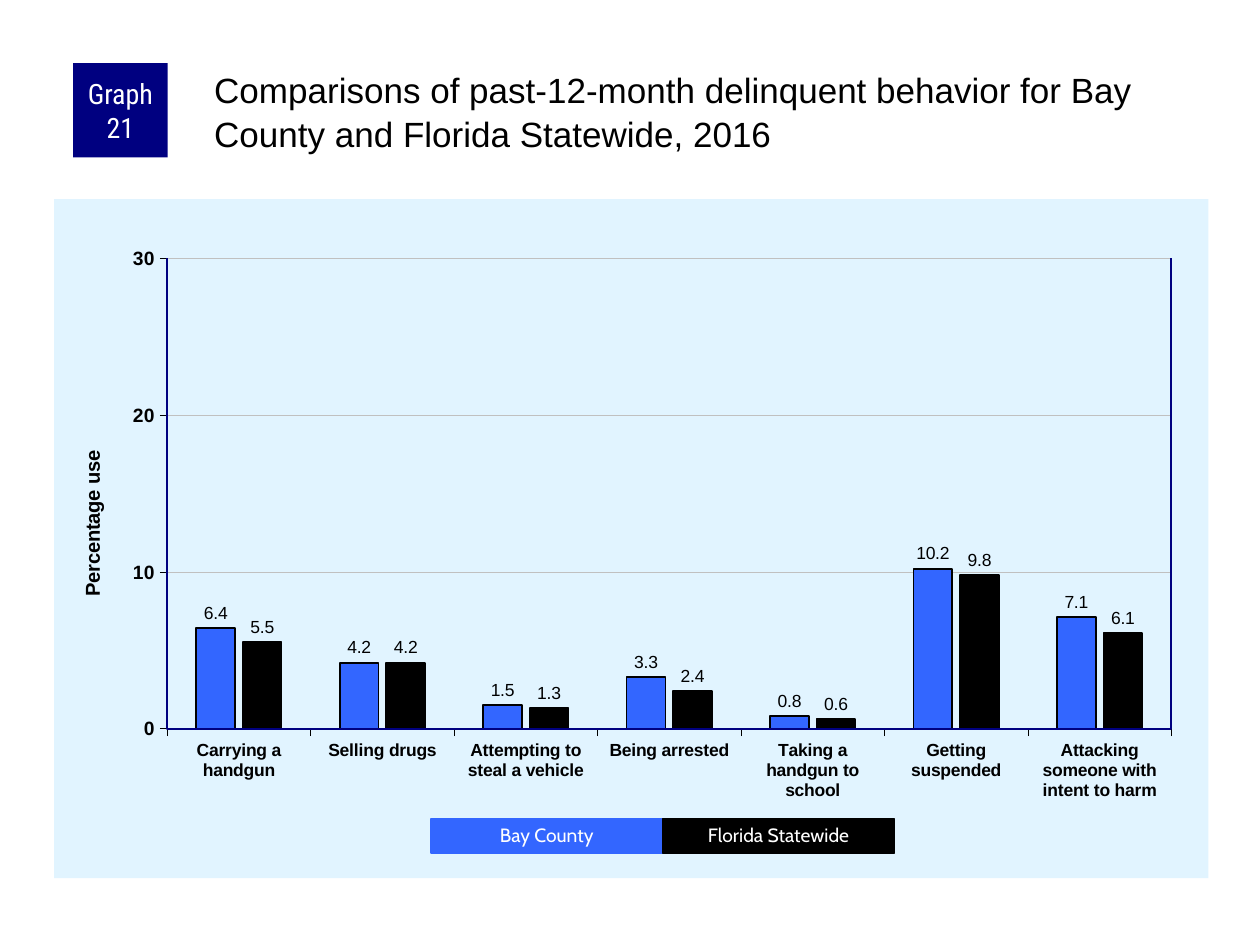
import pptx
import pptx.util
import pptx.chart.data
import pptx.dml.color
import pptx.enum.chart
import pptx.enum.shapes
import pptx.enum.text
import pptx.oxml

Inches, Pt = pptx.util.Inches, pptx.util.Pt
ANCHOR = pptx.enum.text.MSO_ANCHOR
ALIGN = pptx.enum.text.PP_ALIGN

TITLE = ("Comparisons of past-12-month delinquent behavior for Bay County "
         "and Florida Statewide, 2016")
BADGE = "Graph 21"
AXIS_TITLE = "Percentage use"
BLACK, WHITE, NAVY, BLUE = "000000", "FFFFFF", "000080", "3366FF"
PANEL, GRID = "E1F4FF", "C0C0C0"
REGIONS = [("Bay County", BLUE), ("Florida Statewide", BLACK)]
BEHAVIORS = [
    ("Carrying a handgun", 6.4, 5.5),
    ("Selling drugs", 4.2, 4.2),
    ("Attempting to steal a vehicle", 1.5, 1.3),
    ("Being arrested", 3.3, 2.4),
    ("Taking a handgun to school", 0.8, 0.6),
    ("Getting suspended", 10.2, 9.8),
    ("Attacking someone with intent to harm", 7.1, 6.1),
]
CHART = (0.43, 1.58, 9.16, 5.39)
PLOT = {"x": 0.098, "y": 0.087, "w": 0.87, "h": 0.693}
KEY_LEFT, KEY_TOP, KEY_WIDTH, KEY_HEIGHT = 3.42, 6.5, 1.84, 0.27


def color(value):
    return pptx.dml.color.RGBColor.from_string(value)


def fill(target, value):
    target.fill.solid()
    target.fill.fore_color.rgb = color(value)


def outline(line, value, width):
    line.color.rgb = color(value)
    line.width = Pt(width)


def style(font, size, value=BLACK, name="Arial", bold=False):
    font.size, font.name, font.bold = Pt(size), name, bold
    font.color.rgb = color(value)


def write(frame, text, size, value, name, align, spacing=1.0):
    para = frame.paragraphs[0]
    para.alignment, para.line_spacing = align, spacing
    span = para.add_run()
    span.text = text
    style(span.font, size, value, name)


def add_block(page, bounds, value, text, size, name, insets, spacing=1.0):
    box = page.shapes.add_shape(pptx.enum.shapes.MSO_SHAPE.RECTANGLE,
                                *map(Inches, bounds))
    box.shadow.inherit = False
    fill(box, value)
    outline(box.line, value, 0.75)
    frame = box.text_frame
    frame.word_wrap, frame.vertical_anchor = True, ANCHOR.MIDDLE
    frame.margin_left = frame.margin_right = Inches(insets[0])
    frame.margin_top = frame.margin_bottom = Inches(insets[1])
    write(frame, text, size, WHITE, name, ALIGN.CENTER, spacing)
    return box


def fix_plot_area(chart):
    items = "".join(f'<c:{key} val="{value}"/>' for key, value in PLOT.items())
    layout = pptx.oxml.parse_xml(
        '<c:layout xmlns:c="http://schemas.openxmlformats.org/drawingml/2006/chart">'
        '<c:manualLayout><c:layoutTarget val="inner"/>'
        f'<c:xMode val="edge"/><c:yMode val="edge"/>{items}'
        '</c:manualLayout></c:layout>')
    area = chart._chartSpace.chart.plotArea
    for old in area.xpath("c:layout"):
        area.remove(old)
    area.insert(0, layout)


def fill_chart_area(chart):
    space = chart._chartSpace
    properties = pptx.oxml.parse_xml(
        '<c:spPr xmlns:c="http://schemas.openxmlformats.org/drawingml/2006/chart" '
        'xmlns:a="http://schemas.openxmlformats.org/drawingml/2006/main">'
        f'<a:solidFill><a:srgbClr val="{PANEL}"/></a:solidFill>'
        '<a:ln><a:noFill/></a:ln></c:spPr>')
    space.chart.addnext(properties)


def add_behavior_chart(page):
    data = pptx.chart.data.CategoryChartData(number_format="0.0")
    data.categories = [row[0] for row in BEHAVIORS]
    for index, (region, _) in enumerate(REGIONS, 1):
        data.add_series(region, [row[index] for row in BEHAVIORS])
    chart = page.shapes.add_chart(
        pptx.enum.chart.XL_CHART_TYPE.COLUMN_CLUSTERED,
        *map(Inches, CHART), data).chart
    style(chart.font, 11.5)
    chart.has_legend = chart.has_title = False
    fill_chart_area(chart)
    fix_plot_area(chart)

    plot = chart.plots[0]
    plot.gap_width, plot.overlap, plot.vary_by_categories = 150, -20, False
    for series, (_, value) in zip(plot.series, REGIONS):
        fill(series.format, value)
        outline(series.format.line, BLACK, 1)
        series.invert_if_negative = False
        labels = series.data_labels
        labels.show_value = True
        labels.number_format, labels.number_format_is_linked = "0.0", False
        labels.position = pptx.enum.chart.XL_LABEL_POSITION.OUTSIDE_END
        style(labels.font, 10)

    for axis, size in ((chart.category_axis, 10), (chart.value_axis, 11)):
        axis.major_tick_mark = pptx.enum.chart.XL_TICK_MARK.OUTSIDE
        outline(axis.format.line, BLACK, 0.25)
        style(axis.tick_labels.font, size, bold=True)
    axis = chart.value_axis
    axis.minimum_scale, axis.maximum_scale, axis.major_unit = 0, 30, 10
    axis.tick_labels.number_format = "0"
    axis.tick_labels.number_format_is_linked = False
    outline(axis.major_gridlines.format.line, GRID, 0.25)
    span = axis.axis_title.text_frame.paragraphs[0].add_run()
    span.text = AXIS_TITLE
    style(span.font, 11.5, bold=True)


def add_plot_frame(page):
    left = CHART[0] + PLOT["x"] * CHART[2]
    top = CHART[1] + PLOT["y"] * CHART[3]
    right = left + PLOT["w"] * CHART[2]
    bottom = top + PLOT["h"] * CHART[3]
    builder = page.shapes.build_freeform(Inches(left), Inches(top))
    corners = [(left, bottom), (right, bottom), (right, top)]
    builder.add_line_segments([(Inches(x), Inches(y)) for x, y in corners],
                              close=False)
    frame = builder.convert_to_shape()
    frame.shadow.inherit = False
    frame.fill.background()
    outline(frame.line, NAVY, 1.25)


def add_title(page):
    title = page.shapes.title
    title.left, title.top, title.width, title.height = map(
        Inches, (1.67, 0.5, 7.92, 0.83))
    frame = title.text_frame
    frame.word_wrap, frame.vertical_anchor = True, ANCHOR.TOP
    frame.auto_size = pptx.enum.text.MSO_AUTO_SIZE.NONE
    frame.margin_left = frame.margin_top = Inches(0.03)
    frame.margin_right = frame.margin_bottom = 0
    write(frame, TITLE, 20, BLACK, "Arial", ALIGN.LEFT, 1.04)


def main():
    deck = pptx.Presentation()
    deck.slide_width, deck.slide_height = Inches(10), Inches(7.5)
    page = deck.slides.add_slide(deck.slide_layouts[5])
    add_title(page)
    add_behavior_chart(page)
    add_plot_frame(page)
    badge = add_block(page, (0.58, 0.5, 0.75, 0.75), NAVY, BADGE, 16,
                      "Roboto Condensed", (0.05, 0))
    badge.line.fill.background()
    for index, (region, value) in enumerate(REGIONS):
        bounds = (KEY_LEFT + index * KEY_WIDTH, KEY_TOP, KEY_WIDTH, KEY_HEIGHT)
        add_block(page, bounds, value, region, 11, "Cabin", (0.1, 0.05), 0.9)
    deck.save("out.pptx")


if __name__ == "__main__":
    main()
